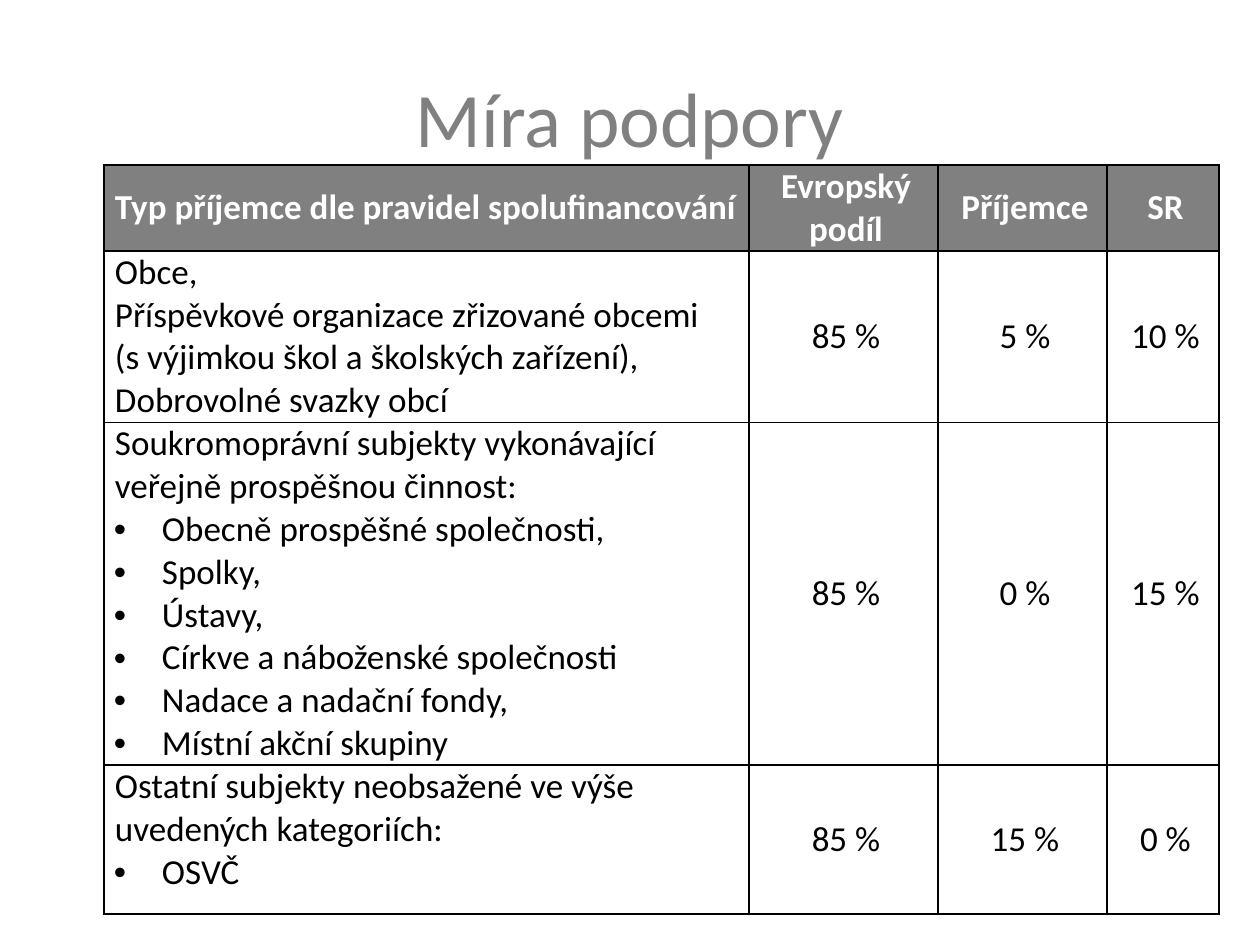
from dataclasses import dataclass

from lxml.etree import SubElement
from pptx import Presentation
from pptx.dml.color import RGBColor
from pptx.enum.text import MSO_ANCHOR, PP_ALIGN
from pptx.oxml.ns import qn
from pptx.util import Emu, Pt

PX_PER_INCH = 126
FONT = "Calibri"
COLORS = {"gray": "808080", "white": "FFFFFF", "black": "000000"}
COLUMN_WIDTHS = (645, 189, 169, 112)
HEADERS = ("Typ příjemce dle pravidel spolufinancování", "Evropský podíl", "Příjemce", "SR")


@dataclass(frozen=True)
class SupportRate:
    height: int
    recipients: tuple[str, ...]
    shares: tuple[str, str, str]
    bullets: tuple[str, ...] = ()


RATES = (
    SupportRate(
        159,
        ("Obce,",
         "Příspěvkové organizace zřizované obcemi \v"
         "(s výjimkou škol a školských zařízení), Dobrovolné svazky obcí"),
        ("85 %", "5 %", "10 %"),
    ),
    SupportRate(
        318,
        ("Soukromoprávní subjekty vykonávající veřejně prospěšnou činnost:",),
        ("85 %", "0 %", "15 %"),
        ("Obecně prospěšné společnosti,", "Spolky,", "Ústavy,",
         "Církve a náboženské společnosti", "Nadace a nadační fondy,",
         "Místní akční skupiny"),
    ),
    SupportRate(
        149,
        ("Ostatní subjekty neobsažené ve výše uvedených kategoriích:",),
        ("85 %", "15 %", "0 %"),
        ("OSVČ",),
    ),
)


def px(n: int) -> Emu:
    return Emu(round(n * 914400 / PX_PER_INCH))


def write(p, text: str, size: int, color: str, bold: bool = False, align=PP_ALIGN.LEFT) -> None:
    p.text = text
    p.alignment = align
    for r in p.runs:
        for name, value in {"name": FONT, "size": Pt(size), "bold": bold}.items():
            setattr(r.font, name, value)
        r.font.color.rgb = RGBColor.from_string(COLORS[color])


def indent(p, left: int, first: int = 0, bullet: bool = False) -> None:
    pPr = p._p.get_or_add_pPr()
    pPr.set("marL", str(px(left)))
    pPr.set("indent", str(px(first)))
    if bullet:
        SubElement(pPr, qn("a:buFont"), typeface="Arial")
        SubElement(pPr, qn("a:buChar"), char="•")


def add_borders(cell) -> None:
    tcPr = cell._tc.get_or_add_tcPr()
    for side in ("L", "R", "T", "B"):
        ln = SubElement(tcPr, qn(f"a:ln{side}"), w=str(Pt(1)))
        fill = SubElement(ln, qn("a:solidFill"))
        SubElement(fill, qn("a:srgbClr"), val=COLORS["black"])


def fill_cell(cell, lines: tuple[str, ...], bullets: tuple[str, ...] = (), *,
              header: bool = False, centered: bool = False) -> None:
    middle = header or centered
    margins = {"margin_left": px(6), "margin_right": px(6), "margin_top": 0, "margin_bottom": 0,
               "vertical_anchor": MSO_ANCHOR.MIDDLE if middle else MSO_ANCHOR.TOP}
    for name, value in margins.items():
        setattr(cell, name, value)
    add_borders(cell)
    if header:
        cell.fill.solid()
        cell.fill.fore_color.rgb = RGBColor.from_string(COLORS["gray"])
    else:
        cell.fill.background()
    tf = cell.text_frame
    for i, text in enumerate(lines + bullets):
        p = tf.add_paragraph() if i else tf.paragraphs[0]
        write(p, text, 20, "white" if header else "black", header,
              PP_ALIGN.CENTER if centered else PP_ALIGN.LEFT)
        if i < len(lines):
            indent(p, 5)
        else:
            indent(p, 52, -48, bullet=True)


def add_title(s) -> None:
    title = s.shapes.title
    title.left, title.top, title.width, title.height = px(63), px(38), px(1134), px(157)
    title.text_frame.vertical_anchor = MSO_ANCHOR.MIDDLE
    write(title.text_frame.paragraphs[0], "Míra podpory", 44, "gray", align=PP_ALIGN.CENTER)


def add_rates_table(s) -> None:
    frame = s.shapes.add_table(len(RATES) + 1, len(HEADERS), px(104), px(165),
                               px(sum(COLUMN_WIDTHS)), px(737))
    table = frame.table
    table.first_row = table.horz_banding = False
    for column, width in zip(table.columns, COLUMN_WIDTHS):
        column.width = px(width)
    heights = (79, *(rate.height for rate in RATES))
    for row, height in zip(table.rows, heights):
        row.height = px(height)
    for col, text in enumerate(HEADERS):
        fill_cell(table.cell(0, col), (text,), header=True, centered=col > 0)
    for row, rate in enumerate(RATES, 1):
        fill_cell(table.cell(row, 0), rate.recipients, rate.bullets)
        for col, share in enumerate(rate.shares, 1):
            fill_cell(table.cell(row, col), (share,), centered=True)
    frame.height = px(737)


def main() -> None:
    prs = Presentation()
    prs.slide_width, prs.slide_height = px(1260), px(945)
    s = prs.slides.add_slide(prs.slide_layouts[5])
    add_title(s)
    add_rates_table(s)
    prs.save("out.pptx")


if __name__ == "__main__":
    main()
